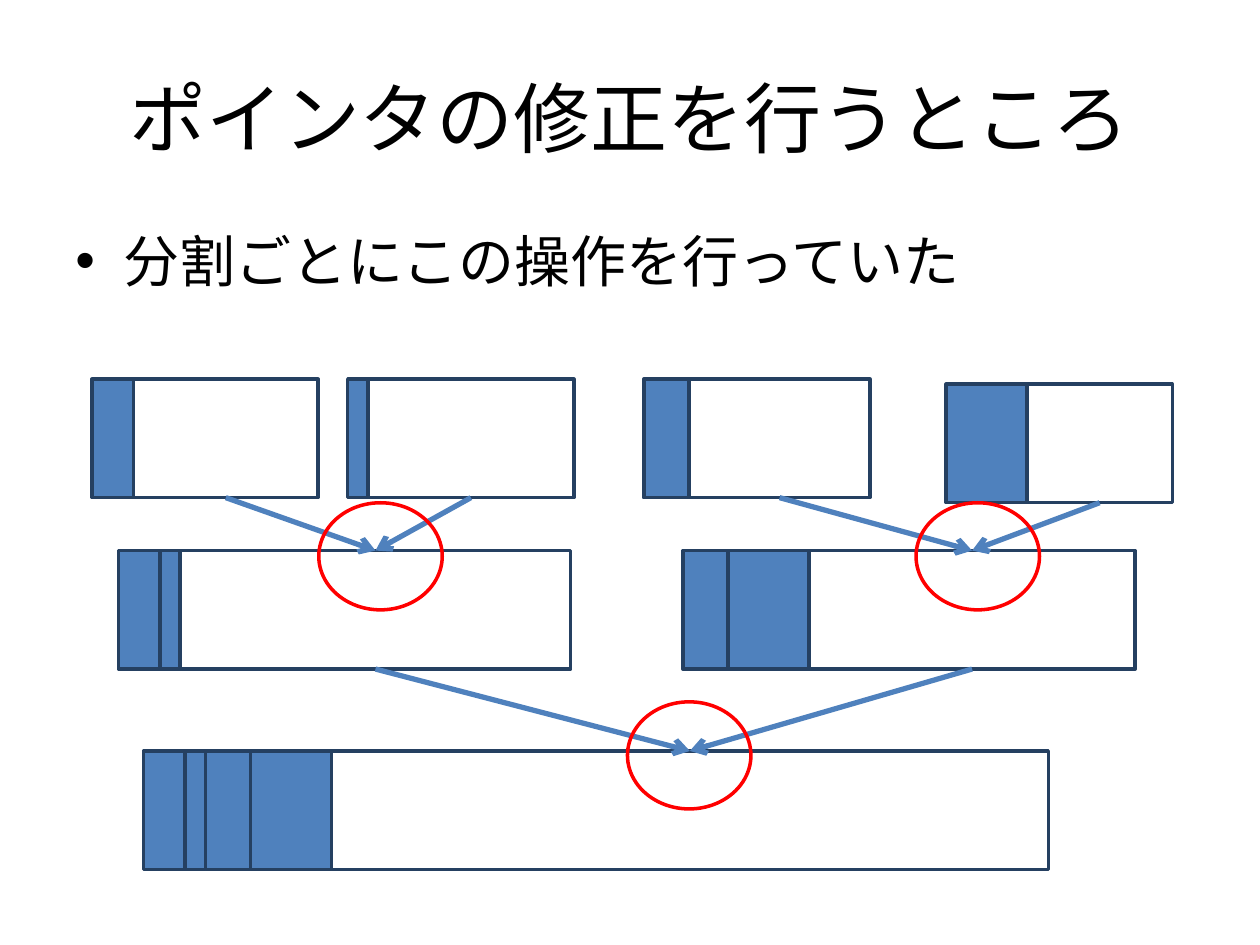
from dataclasses import dataclass

import pptx
from lxml import etree
from pptx.dml.color import RGBColor
from pptx.enum.shapes import MSO_CONNECTOR, MSO_SHAPE
from pptx.enum.text import MSO_ANCHOR, PP_ALIGN
from pptx.oxml.ns import qn
from pptx.util import Inches, Pt

BLACK = RGBColor(0x00, 0x00, 0x00)
WHITE = RGBColor(0xFF, 0xFF, 0xFF)
BLUE = RGBColor(0x4F, 0x81, 0xBD)
NAVY = RGBColor(0x25, 0x40, 0x61)
RED = RGBColor(0xFF, 0x00, 0x00)

FONT = "Calibri"
ROOT_WIDTH = 7.18
NODE_HEIGHT = 0.94
RING_WIDTH, RING_HEIGHT = 0.98, 0.85


@dataclass(frozen=True)
class Node:
    """A row of filled keys followed by free space."""
    left: float
    top: float
    keys: tuple[float, ...]

    @property
    def free_left(self) -> float:
        return self.left + sum(self.keys)

    @property
    def free_width(self) -> float:
        return ROOT_WIDTH * len(self.keys) / 4 - sum(self.keys)

    @property
    def free_middle(self) -> float:
        return self.free_left + self.free_width / 2


KEY_WIDTHS = (0.33, 0.16, 0.36, 0.64)
LEAVES = [
    Node(left, top, (key,))
    for left, top, key in zip((0.73, 2.76, 5.11, 7.51), (3.01, 3.01, 3.01, 3.05), KEY_WIDTHS)
]
BRANCHES = [Node(0.94, 4.37, KEY_WIDTHS[:2]), Node(5.42, 4.37, KEY_WIDTHS[2:])]
ROOT = Node(1.14, 5.96, KEY_WIDTHS)
LINKS = [
    (LEAVES[0], BRANCHES[0]),
    (LEAVES[1], BRANCHES[0]),
    (LEAVES[2], BRANCHES[1]),
    (LEAVES[3], BRANCHES[1]),
    (BRANCHES[0], ROOT),
    (BRANCHES[1], ROOT),
]
RING_CORNERS = [(2.53, 3.99), (4.98, 5.57), (7.27, 3.99)]


def add_text(page, top: float, height: float, text: str, size: int):
    box = page.shapes.add_textbox(Inches(0.5), Inches(top), Inches(9), Inches(height))
    box.text_frame.word_wrap = True
    para = box.text_frame.paragraphs[0]
    para.text = text
    span = para.runs[0]
    span.font.name = FONT
    span.font.size = Pt(size)
    span.font.color.rgb = BLACK
    return box


def add_bullet(para) -> None:
    properties = para._p.get_or_add_pPr()
    properties.set("marL", str(Inches(0.38)))
    properties.set("indent", str(-Inches(0.38)))
    etree.SubElement(properties, qn("a:buFont")).set("typeface", "Arial")
    etree.SubElement(properties, qn("a:buChar")).set("char", "•")


def add_outlined(page, kind, left: float, top: float, width: float, height: float,
                 line: RGBColor, fill: RGBColor | None = None) -> None:
    shape = page.shapes.add_shape(kind, Inches(left), Inches(top), Inches(width), Inches(height))
    shape.shadow.inherit = False
    if fill is None:
        shape.fill.background()
    else:
        shape.fill.solid()
        shape.fill.fore_color.rgb = fill
    shape.line.color.rgb = line
    shape.line.width = Pt(2)


def draw_node(page, node: Node) -> None:
    add_outlined(page, MSO_SHAPE.RECTANGLE, node.free_left, node.top,
                 node.free_width, NODE_HEIGHT, NAVY, WHITE)
    left = node.left
    for width in node.keys:
        add_outlined(page, MSO_SHAPE.RECTANGLE, left, node.top, width, NODE_HEIGHT, NAVY, BLUE)
        left += width


def draw_link(page, child: Node, parent: Node) -> None:
    """Arrow from below a child's free space to the top of its parent's."""
    arrow = page.shapes.add_connector(
        MSO_CONNECTOR.STRAIGHT,
        Inches(child.free_middle), Inches(child.top + NODE_HEIGHT),
        Inches(parent.free_middle), Inches(parent.top),
    )
    arrow.line.color.rgb = BLUE
    arrow.line.width = Pt(3)
    etree.SubElement(arrow.line._get_or_add_ln(), qn("a:tailEnd")).set("type", "arrow")
    etree.SubElement(arrow._element.spPr, qn("a:effectLst"))


def main() -> None:
    deck = pptx.Presentation()
    deck.slide_width, deck.slide_height = Inches(10), Inches(7.5)
    page = deck.slides.add_slide(deck.slide_layouts[6])

    title = add_text(page, 0.3, 1.25, "ポインタの修正を行うところ", 44)
    title.text_frame.vertical_anchor = MSO_ANCHOR.MIDDLE
    title.text_frame.paragraphs[0].alignment = PP_ALIGN.CENTER

    body = add_text(page, 1.75, 4.95, "分割ごとにこの操作を行っていた", 32)
    statement = body.text_frame.paragraphs[0]
    statement.space_before = Pt(6.4)
    add_bullet(statement)

    for node in (*LEAVES, *BRANCHES, ROOT):
        draw_node(page, node)
    for child, parent in LINKS:
        draw_link(page, child, parent)
    for left, top in RING_CORNERS:
        add_outlined(page, MSO_SHAPE.OVAL, left, top, RING_WIDTH, RING_HEIGHT, RED)

    deck.save("out.pptx")


if __name__ == "__main__":
    main()
